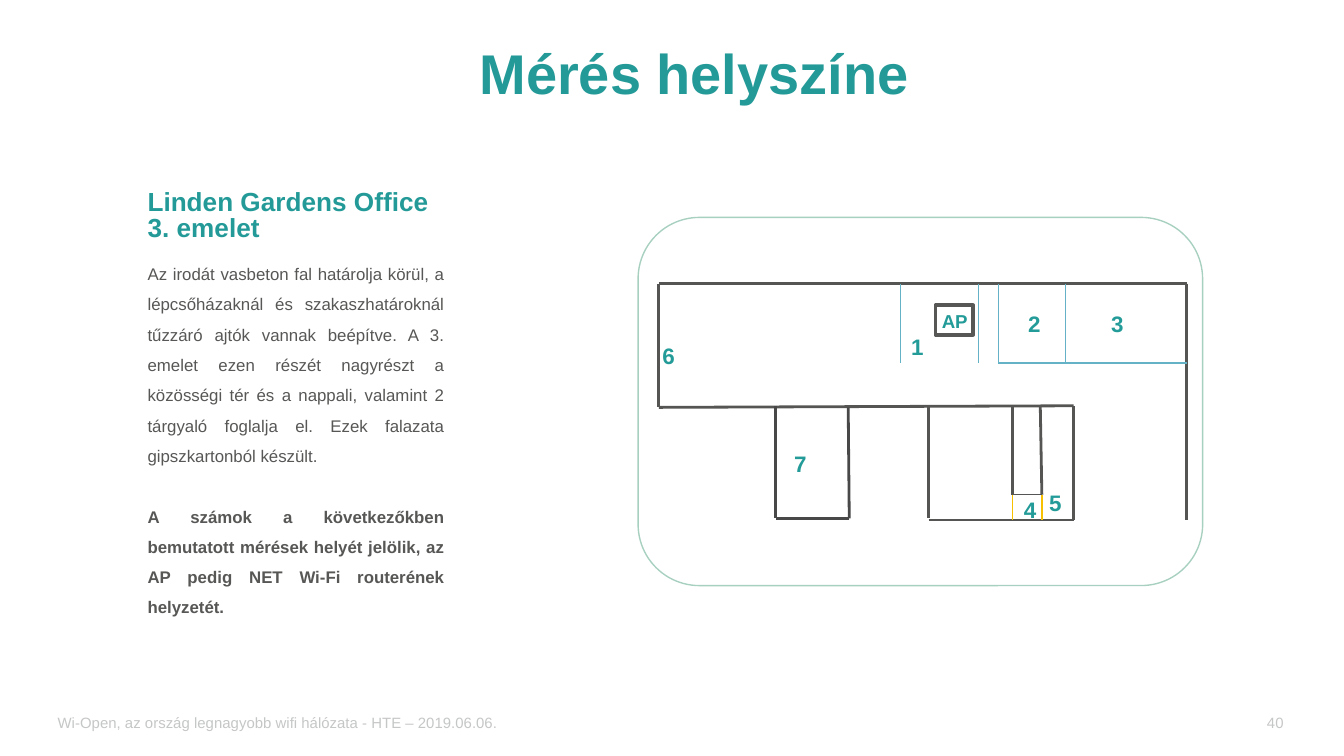
from lxml import etree
from pptx import Presentation
from pptx.dml.color import RGBColor
from pptx.enum.shapes import MSO_CONNECTOR, MSO_SHAPE
from pptx.enum.text import MSO_ANCHOR, MSO_AUTO_SIZE, PP_ALIGN
from pptx.oxml.ns import qn
from pptx.util import Cm, Pt

LEFT, CENTER, RIGHT, JUSTIFY = PP_ALIGN.LEFT, PP_ALIGN.CENTER, PP_ALIGN.RIGHT, PP_ALIGN.JUSTIFY
TOP, MIDDLE, BOTTOM = MSO_ANCHOR.TOP, MSO_ANCHOR.MIDDLE, MSO_ANCHOR.BOTTOM
STRAIGHT = MSO_CONNECTOR.STRAIGHT
RECTANGLE, ROUNDED = MSO_SHAPE.RECTANGLE, MSO_SHAPE.ROUNDED_RECTANGLE
NO_AUTOFIT = MSO_AUTO_SIZE.NONE

COLORS = {
    "teal": "239A98", "label": "239B98", "text": "575756", "footer": "C5C6C6",
    "wall": "555554", "room": "494849", "partition": "63B2C6", "door": "F7C000",
    "frame": "A8D0C0", "white": "FFFFFF",
}

TITLE = "Mérés helyszíne"
HEADING = "Linden Gardens Office 3. emelet"
DESCRIPTION = (
    "Az irodát vasbeton fal határolja körül, a lépcsőházaknál és szakaszhatároknál "
    "tűzzáró ajtók vannak beépítve. A 3. emelet ezen részét nagyrészt a közösségi tér "
    "és a nappali, valamint 2 tárgyaló foglalja el. Ezek falazata gipszkartonból készült."
)
LEGEND = (
    "A számok a következőkben bemutatott mérések helyét jelölik, "
    "az AP pedig NET Wi-Fi routerének helyzetét."
)
FOOTER = "Wi-Open, az ország legnagyobb wifi hálózata - HTE – 2019.06.06."
PAGE = "40"

WEST, EAST = 12.45, 22.43
NORTH, PARTITION_END, CORRIDOR, SHAFT_END, SOUTH = 5.36, 6.86, 7.67, 9.35, 9.83
MEETING_LEFT, MEETING_SPLIT = 18.87, 20.14
WING_LEFT, WING_RIGHT = 17.55, 20.29
SHAFT_LEFT, SHAFT_RIGHT = 19.13, 19.69
ROOM_LEFT, ROOM_RIGHT, ROOM_END = 14.66, 16.05, 9.8

LINES = [
    ("wall", 1.5, [
        (WEST, NORTH, EAST, NORTH),
        (EAST, NORTH, EAST, SOUTH),
        (WEST, NORTH, WEST, 7.7),
        (WEST, 7.7, WING_RIGHT, CORRIDOR),
        (WING_LEFT, CORRIDOR, WING_LEFT, ROOM_END),
        (WING_LEFT, SOUTH, WING_RIGHT, SOUTH),
        (WING_RIGHT, SOUTH, WING_RIGHT, CORRIDOR),
        (SHAFT_LEFT, CORRIDOR, SHAFT_LEFT, SHAFT_END),
        (19.66, CORRIDOR, SHAFT_RIGHT, SHAFT_END),
    ]),
    ("wall", 0.75, [(SHAFT_RIGHT, SHAFT_END, SHAFT_LEFT, SHAFT_END)]),
    ("partition", 0.75, [
        (x, NORTH, x, PARTITION_END) for x in (17.02, 18.49, MEETING_LEFT, MEETING_SPLIT)
    ] + [
        (MEETING_SPLIT, PARTITION_END, x, PARTITION_END) for x in (MEETING_LEFT, EAST)
    ]),
    ("door", 0.75, [(x, SHAFT_END, x, SOUTH) for x in (SHAFT_LEFT, SHAFT_RIGHT)]),
    ("room", 1.5, [
        (ROOM_LEFT, CORRIDOR, ROOM_LEFT, ROOM_END),
        (16.03, 7.7, ROOM_RIGHT, ROOM_END),
        (ROOM_RIGHT, ROOM_END, ROOM_LEFT, ROOM_END),
    ]),
]

OUTLINES = [
    (RECTANGLE, (17.68, 5.77, 0.71, 0.56), "white", "text", 2),
    (ROUNDED, (12.06, 4.11, 10.67, 6.96), None, "frame", 0.75),
]

SPOTS = [
    ("1", 16.97, 6.17), ("2", 19.18, 5.74), ("3", 20.75, 5.74), ("4", 19.1, 9.25),
    ("5", 19.58, 9.12), ("6", 12.27, 6.35), ("7", 14.76, 8.38),
]


def rgb(name):
    return RGBColor.from_string(COLORS[name])


def write(shape, place, *texts, size, color, bold=(False,), align=LEFT,
          anchor=TOP, spacing=1.0, gap=0):
    shape.left, shape.top, shape.width, shape.height = map(Cm, place)
    frame = shape.text_frame
    frame.word_wrap = True
    frame.auto_size = NO_AUTOFIT
    frame.vertical_anchor = anchor
    for index, (text, heavy) in enumerate(zip(texts, bold)):
        paragraph = frame.add_paragraph() if index else frame.paragraphs[0]
        paragraph.alignment = align
        paragraph.line_spacing = spacing
        if index:
            paragraph.space_before = Pt(gap)
        run = paragraph.add_run()
        run.text = text
        run.font.name = "Arial"
        run.font.size = Pt(size)
        run.font.bold = heavy
        run.font.color.rgb = rgb(color)


def draw_line(slide, ends, color, width):
    line = slide.shapes.add_connector(STRAIGHT, *map(Cm, ends))
    line.line.color.rgb = rgb(color)
    line.line.width = Pt(width)
    etree.SubElement(line._element.spPr, qn("a:effectLst"))


def draw_outline(slide, kind, place, fill, color, width):
    outline = slide.shapes.add_shape(kind, *map(Cm, place))
    outline.shadow.inherit = False
    if fill:
        outline.fill.solid()
        outline.fill.fore_color.rgb = rgb(fill)
    else:
        outline.fill.background()
    outline.line.color.rgb = rgb(color)
    outline.line.width = Pt(width)


def main():
    deck = Presentation()
    deck.slide_width, deck.slide_height = Cm(25.4), Cm(14.29)
    slide = deck.slides.add_slide(deck.slide_layouts[5])

    def text_box(place, *texts, **style):
        write(slide.shapes.add_textbox(0, 0, 0, 0), place, *texts, **style)

    write(slide.shapes.title, (2.54, 0.84, 21.16, 1.27), TITLE, size=30, color="teal",
          bold=(True,), align=CENTER, anchor=BOTTOM, spacing=0.8)
    text_box((0.84, 13.36, 11.61, 0.61), FOOTER, size=8, color="footer", anchor=MIDDLE)
    text_box((18.59, 13.36, 5.92, 0.61), PAGE, size=8, color="footer",
             align=RIGHT, anchor=MIDDLE)
    text_box((2.54, 3.48, 6, 1.22), HEADING, size=14, color="teal", bold=(True,),
             anchor=BOTTOM, spacing=0.8)
    text_box((2.54, 4.67, 6.1, 8.36), DESCRIPTION, LEGEND, size=9, color="text",
             bold=(False, True), align=JUSTIFY, spacing=1.5, gap=16.2)

    for color, width, group in LINES:
        for ends in group:
            draw_line(slide, ends, color, width)
    for outline in OUTLINES:
        draw_outline(slide, *outline)

    text_box((17.55, 5.74, 1.07, 0.69), "AP", size=10, color="label", bold=(True,))
    for number, left, top in SPOTS:
        text_box((left, top, 0.81, 0.76), number, size=12, color="label", bold=(True,))

    deck.save("out.pptx")


if __name__ == "__main__":
    main()
